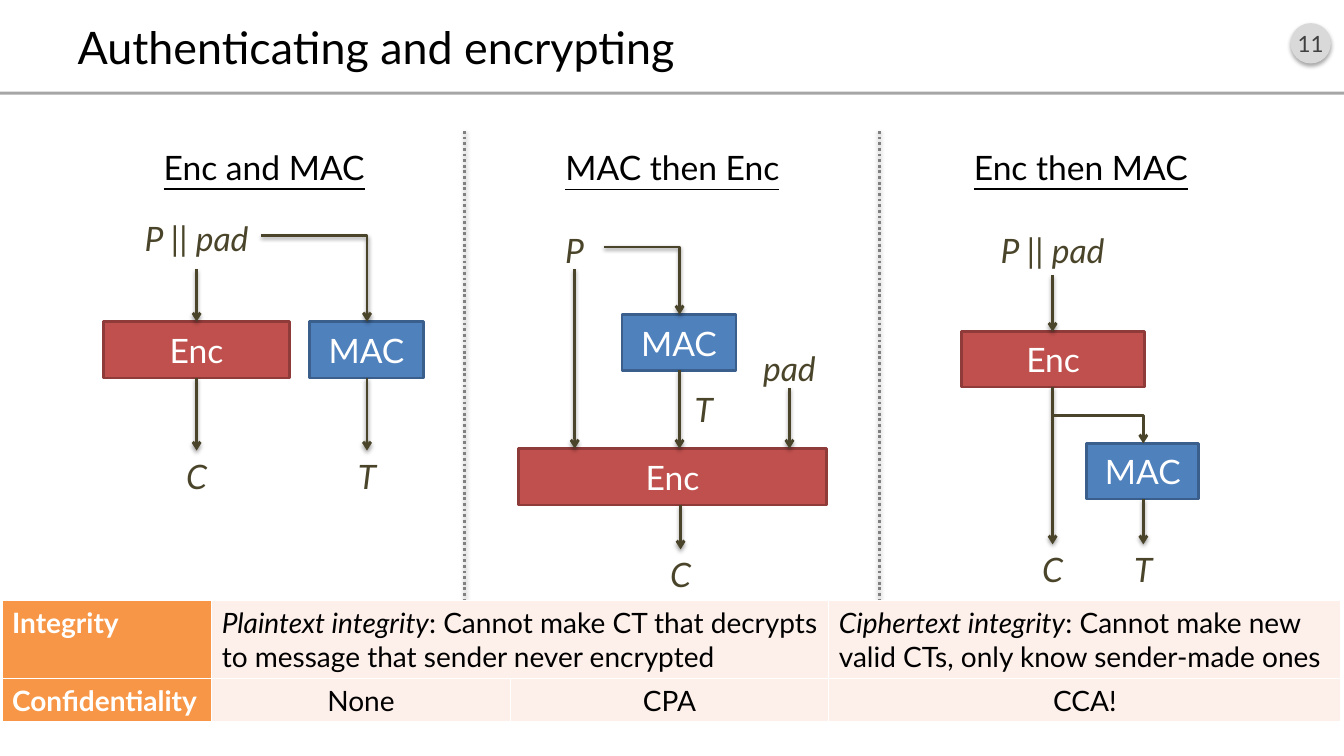
from lxml import etree
from pptx import Presentation
from pptx import util as u
from pptx.dml.color import RGBColor
from pptx.enum import dml, shapes, text
from pptx.oxml import ns

BLACK = RGBColor(0x00, 0x00, 0x00)
WHITE = RGBColor(0xFF, 0xFF, 0xFF)
CHARCOAL = RGBColor(0x40, 0x40, 0x40)
GREY = RGBColor(0x80, 0x80, 0x80)
RULE_GREY = RGBColor(0xA6, 0xA6, 0xA6)
BADGE_GREY = RGBColor(0xD9, 0xD9, 0xD9)
OLIVE = RGBColor(0x4A, 0x45, 0x2A)
BLUE = RGBColor(0x4F, 0x81, 0xBD)
DARK_BLUE = RGBColor(0x3A, 0x5F, 0x8C)
RED = RGBColor(0xC0, 0x50, 0x4D)
DARK_RED = RGBColor(0x8E, 0x3B, 0x39)
ORANGE = RGBColor(0xF7, 0x96, 0x46)
PEACH = RGBColor(0xFD, 0xEF, 0xE9)

CENTER = text.PP_ALIGN.CENTER
MIDDLE = text.MSO_ANCHOR.MIDDLE


def add_node(parent, tag, **attributes):
    node = etree.SubElement(parent, ns.qn(tag))
    for name, value in attributes.items():
        node.set(name, str(value))
    return node


def write(para, words, size=24, color=BLACK, bold=False, italic=False, underline=False, font="Lato"):
    span = para.add_run()
    span.text = words
    span.font.name = font
    span.font.size = u.Pt(size)
    span.font.color.rgb = color
    span.font.bold = bold
    span.font.italic = italic
    span.font.underline = underline


def add_shadow(properties, alpha):
    effects = properties.find(ns.qn("a:effectLst"))
    if effects is None:
        effects = add_node(properties, "a:effectLst")
    shadow = add_node(effects, "a:outerShdw", blurRad=u.Pt(3.1), dist=u.Pt(1.7),
                      dir=5400000, rotWithShape=0)
    add_node(add_node(shadow, "a:srgbClr", val="000000"), "a:alpha", val=alpha * 1000)


class SlideBuilder:
    def __init__(self, deck):
        self.page = deck.slides.add_slide(deck.slide_layouts[4])
        self.shapes = self.page.shapes

    def placeholder(self, index, left, top, width, height):
        box = self.page.placeholders[index]
        box.left, box.top = u.Inches(left), u.Inches(top)
        box.width, box.height = u.Inches(width), u.Inches(height)
        return box

    def title(self, words):
        frame = self.placeholder(0, 0.67, 0.16, 12, 0.6).text_frame
        frame.auto_size = text.MSO_AUTO_SIZE.NONE
        frame.vertical_anchor = MIDDLE
        frame.paragraphs[0].alignment = text.PP_ALIGN.LEFT
        write(frame.paragraphs[0], words, size=32)

    def heading(self, words, left, index=None):
        area = (left, 1.21, 3.9, 0.7)
        if index is None:
            box = self.shapes.add_textbox(*map(u.Inches, area))
        else:
            box = self.placeholder(index, *area)
        frame = box.text_frame
        frame.word_wrap = True
        frame.auto_size = text.MSO_AUTO_SIZE.NONE
        frame.vertical_anchor = text.MSO_ANCHOR.BOTTOM
        para = frame.paragraphs[0]
        para.alignment = CENTER
        para.space_before = u.Pt(8)
        write(para, words, underline=True)

    def shape(self, kind, left, top, width, height, fill, line=None):
        box = self.shapes.add_shape(kind, *map(u.Inches, (left, top, width, height)))
        box.shadow.inherit = False
        box.fill.solid()
        box.fill.fore_color.rgb = fill
        if line is None:
            box.line.fill.background()
        else:
            box.line.color.rgb = line
            box.line.width = u.Pt(2)
        return box

    def badge(self, words):
        box = self.shape(shapes.MSO_SHAPE.OVAL, 12.8, 0.23, 0.4, 0.4, BADGE_GREY)
        add_shadow(box.element.spPr, 35)
        frame = box.text_frame
        frame.margin_left = frame.margin_right = 0
        frame.vertical_anchor = MIDDLE
        frame.paragraphs[0].alignment = CENTER
        write(frame.paragraphs[0], words, size=16, color=CHARCOAL)

    def block(self, words, left, top, width, height=0.56):
        fill, line = (BLUE, DARK_BLUE) if words == "MAC" else (RED, DARK_RED)
        box = self.shape(shapes.MSO_SHAPE.RECTANGLE, left, top, width, height, fill, line)
        box.text_frame.vertical_anchor = MIDDLE
        box.text_frame.paragraphs[0].alignment = CENTER
        write(box.text_frame.paragraphs[0], words, color=WHITE)

    def label(self, words, center, top, width=0.57):
        box = self.shapes.add_textbox(*map(u.Inches, (center - width / 2, top, width, 0.45)))
        box.text_frame.word_wrap = False
        box.text_frame.paragraphs[0].alignment = CENTER
        write(box.text_frame.paragraphs[0], words, color=OLIVE, italic=True)

    def line(self, start, end, kind=shapes.MSO_CONNECTOR.STRAIGHT, color=OLIVE,
             dash=None, arrow=True, shadow=True):
        link = self.shapes.add_connector(kind, *map(u.Inches, (*start, *end)))
        link.line.color.rgb = color
        link.line.width = u.Pt(2)
        if dash:
            link.line.dash_style = dash
        properties = link.element.spPr
        if arrow:
            add_node(properties.find(ns.qn("a:ln")), "a:tailEnd", type="arrow")
        add_node(properties, "a:effectLst")
        if shadow:
            add_shadow(properties, 38)
        return properties

    def down(self, x, top, bottom):
        self.line((x, top), (x, bottom))

    def corner(self, start, end):
        properties = self.line(start, end, shapes.MSO_CONNECTOR.ELBOW)
        properties.find(ns.qn("a:prstGeom")).set("prst", "bentConnector2")

    def step_down(self, start, end):
        middle_x, middle_y = (start[0] + end[0]) / 2, (start[1] + end[1]) / 2
        half_x, half_y = (end[0] - start[0]) / 2, (end[1] - start[1]) / 2
        properties = self.line((middle_x + half_y, middle_y - half_x),
                               (middle_x - half_y, middle_y + half_x),
                               shapes.MSO_CONNECTOR.ELBOW, shadow=False)
        properties.find(ns.qn("a:xfrm")).set("rot", str(270 * 60000))

    def cell(self, cell, spans, fill, alignment=None):
        para = cell.text_frame.paragraphs[0]
        para.alignment = alignment
        for words, style in spans:
            write(para, words, size=20, **style)
        properties = cell._tc.get_or_add_tcPr()
        for side in ("a:lnL", "a:lnR", "a:lnT", "a:lnB"):
            border = add_node(properties, side, w=u.Pt(1))
            add_node(add_node(border, "a:solidFill"), "a:srgbClr", val=WHITE)
        cell.fill.solid()
        cell.fill.fore_color.rgb = fill

    def comparison(self):
        widths, heights = (2.08, 2.96, 3.16, 5.08), (0.77, 0.42)
        area = (0.02, 5.96, sum(widths), sum(heights))
        table = self.shapes.add_table(2, 4, *map(u.Inches, area)).table
        table.first_row = table.horz_banding = False
        for column, width in zip(table.columns, widths):
            column.width = u.Inches(width)
        for row, height in zip(table.rows, heights):
            row.height = u.Inches(height)
        table.cell(0, 1).merge(table.cell(0, 2))
        for row, words in enumerate(("Integrity", "Confidentiality")):
            self.cell(table.cell(row, 0), [(words, {"color": WHITE, "bold": True})], ORANGE)
        integrity = (
            (1, "Plaintext integrity",
             ": Cannot make CT that decrypts to message that sender never encrypted"),
            (3, "Ciphertext integrity",
             ": Cannot make new valid CTs, only know sender-made ones"),
        )
        for column, term, meaning in integrity:
            self.cell(table.cell(0, column), [(term, {"italic": True}), (meaning, {})], PEACH)
        for column, words in enumerate(("None", "CPA", "CCA!"), 1):
            self.cell(table.cell(1, column), [(words, {})], PEACH, CENTER)


def main():
    deck = Presentation()
    deck.slide_width, deck.slide_height = u.Inches(13.33), u.Inches(7.5)
    slide = SlideBuilder(deck)
    slide.badge("11")
    slide.shape(shapes.MSO_SHAPE.RECTANGLE, 0, 0.91, 13.33, 0.03, RULE_GREY)
    slide.title("Authenticating and encrypting")
    slide.heading("Enc and MAC", 0.67, index=1)
    slide.heading("MAC then Enc", 4.72)
    slide.heading("Enc then MAC", 8.77, index=3)
    for index in (2, 4):
        unused = slide.page.placeholders[index].element
        unused.getparent().remove(unused)

    slide.label("P || pad", 1.95, 2.11, 1.28)
    slide.block("MAC", 3.07, 3.19, 1.13)
    slide.block("Enc", 1.03, 3.19, 1.84)
    slide.corner((2.59, 2.34), (3.64, 3.19))
    slide.down(1.95, 2.67, 3.19)
    for words, x in (("C", 1.95), ("T", 3.64)):
        slide.down(x, 3.75, 4.47)
        slide.label(words, x, 4.47)

    slide.label("P", 5.7, 2.23)
    slide.block("MAC", 6.17, 3.12, 1.13)
    slide.block("Enc", 5.14, 4.45, 3.06)
    slide.corner((5.99, 2.45), (6.74, 3.12))
    for x, top in ((5.7, 2.67), (6.74, 3.67), (7.83, 3.85)):
        slide.down(x, top, 4.45)
    slide.label("T", 6.98, 3.81)
    slide.label("pad", 7.83, 3.4, 0.74)
    slide.down(6.75, 5.01, 5.45)
    slide.label("C", 6.75, 5.45)

    for x in (4.61, 8.72):
        slide.line((x, 1.3), (x, 6), color=GREY, dash=dml.MSO_LINE.ROUND_DOT, arrow=False)

    slide.label("P || pad", 10.44, 2.23, 1.3)
    slide.block("MAC", 10.78, 4.4, 1.11, 0.55)
    slide.block("Enc", 9.54, 3.29, 1.81, 0.55)
    slide.down(10.44, 2.73, 3.29)
    for words, x, top in (("C", 10.44, 3.84), ("T", 11.34, 4.95)):
        slide.down(x, top, 5.4)
        slide.label(words, x, 5.4)
    slide.step_down((10.44, 3.84), (11.34, 4.4))

    slide.comparison()
    deck.save("out.pptx")


if __name__ == "__main__":
    main()
